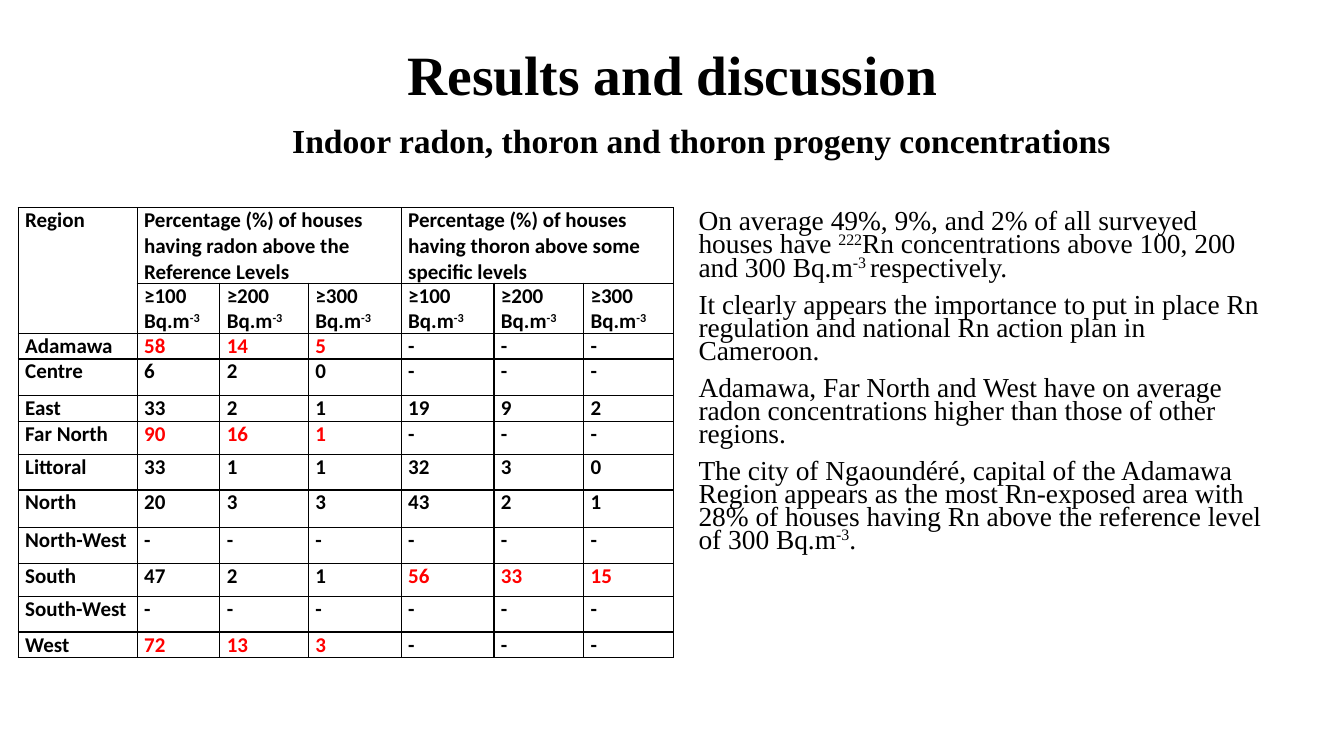
from lxml import etree
from pptx import Presentation
from pptx.dml.color import RGBColor
from pptx.enum.text import MSO_ANCHOR, PP_ALIGN
from pptx.oxml.ns import qn
from pptx.util import Inches, Pt

CENTER, JUSTIFY, LEFT = PP_ALIGN.CENTER, PP_ALIGN.JUSTIFY, PP_ALIGN.LEFT
MIDDLE = MSO_ANCHOR.MIDDLE
SERIF, SANS = "Times New Roman", "Calibri"
BLACK, RED = "000000", "FF0000"
SUPERSCRIPT_MARK = "^"

COLUMN_WIDTHS = [1.18, 0.82, 0.88, 0.92, 0.92, 0.89, 0.89]
ROW_HEIGHTS = [0.74, 0.49, 0.25, 0.36, 0.26, 0.33, 0.35, 0.37, 0.36, 0.33, 0.35, 0.25]
RADON_COLUMNS, THORON_COLUMNS = range(1, 4), range(4, 7)
LEVELS = ["≥100 Bq.m^-3^", "≥200 Bq.m^-3^", "≥300 Bq.m^-3^"]
HEADER_ROWS = [
    ["Region",
     "Percentage (%) of houses having radon above the Reference Levels", "", "",
     "Percentage (%) of houses having thoron above some specific levels", "", ""],
    [""] + LEVELS * 2,
]
REGION_ROWS = [
    ["Adamawa", "58", "14", "5", "-", "-", "-"],
    ["Centre", "6", "2", "0", "-", "-", "-"],
    ["East", "33", "2", "1", "19", "9", "2"],
    ["Far North", "90", "16", "1", "-", "-", "-"],
    ["Littoral", "33", "1", "1", "32", "3", "0"],
    ["North", "20", "3", "3", "43", "2", "1"],
    ["North-West", "-", "-", "-", "-", "-", "-"],
    ["South", "47", "2", "1", "56", "33", "15"],
    ["South-West", "-", "-", "-", "-", "-", "-"],
    ["West", "72", "13", "3", "-", "-", "-"],
]
HIGHLIGHTS = {
    "Adamawa": RADON_COLUMNS,
    "Far North": RADON_COLUMNS,
    "South": THORON_COLUMNS,
    "West": RADON_COLUMNS,
}
FINDINGS = [
    "On average 49%, 9%, and 2% of all surveyed houses have ^222^Rn concentrations "
    "above 100, 200 and 300 Bq.m^-3 ^respectively.",
    "It clearly appears the importance to put in place Rn regulation and national "
    "Rn action plan in Cameroon.",
    "Adamawa, Far North and West have on average radon concentrations higher than "
    "those of other regions.",
    "The city of Ngaoundéré, capital of the Adamawa Region appears as the most "
    "Rn-exposed area with 28% of houses having Rn above the reference level of "
    "300 Bq.m^-3^.",
]


def color(value):
    return RGBColor.from_string(value)


def write(paragraph, text, font_name, size, bold=False, font_color=BLACK):
    for index, part in enumerate(text.split(SUPERSCRIPT_MARK)):
        if not part:
            continue
        run = paragraph.add_run()
        run.text = part
        run.font.name = font_name
        run.font.size = Pt(size)
        run.font.bold = bold
        run.font.color.rgb = color(font_color)
        if index % 2:
            run._r.get_or_add_rPr().set("baseline", "30000")


def add_text_frame(slide, box, wrap=True):
    shape = slide.shapes.add_textbox(*[Inches(length) for length in box])
    shape.text_frame.word_wrap = wrap
    return shape.text_frame


def add_title(slide, box):
    text_frame = add_text_frame(slide, box)
    text_frame.vertical_anchor = MIDDLE
    paragraph = text_frame.paragraphs[0]
    paragraph.alignment = CENTER
    paragraph.line_spacing = 0.9
    write(paragraph, "Results and discussion", SERIF, 39.6, bold=True)


def add_subtitle(slide, box):
    paragraph = add_text_frame(slide, box, wrap=False).paragraphs[0]
    paragraph.level = 1
    properties = paragraph._p.get_or_add_pPr()
    properties.set("marL", str(Inches(0.5)))
    properties.set("indent", "0")
    write(paragraph, "Indoor radon, thoron and thoron progeny concentrations",
          SERIF, 24, bold=True)


def add_findings(slide, box):
    text_frame = add_text_frame(slide, box)
    for index, finding in enumerate(FINDINGS):
        paragraph = text_frame.add_paragraph() if index else text_frame.paragraphs[0]
        paragraph.line_spacing = 0.7
        paragraph.space_before = Pt(10)
        write(paragraph, finding, SERIF, 19.6)


def add_borders(cell):
    properties = cell._tc.get_or_add_tcPr()
    for index, side in enumerate(["lnL", "lnR", "lnT", "lnB"]):
        line = etree.Element(qn(f"a:{side}"), w=str(Pt(1)))
        fill = etree.SubElement(line, qn("a:solidFill"))
        etree.SubElement(fill, qn("a:srgbClr"), val=BLACK)
        properties.insert(index, line)


def format_cell(cell, text, alignment, font_color):
    cell.margin_left = cell.margin_right = Inches(0.07)
    cell.margin_top = cell.margin_bottom = 0
    cell.fill.background()
    add_borders(cell)
    paragraph = cell.text_frame.paragraphs[0]
    paragraph.alignment = alignment
    paragraph.space_after = Pt(6)
    write(paragraph, text, SANS, 15, bold=True, font_color=font_color)


def add_radon_table(slide, box):
    rows = HEADER_ROWS + REGION_ROWS
    table = slide.shapes.add_table(len(rows), len(COLUMN_WIDTHS),
                                   *[Inches(length) for length in box]).table
    table.first_row = table.horz_banding = False
    for column, width in zip(table.columns, COLUMN_WIDTHS):
        column.width = Inches(width)
    for row, height in zip(table.rows, ROW_HEIGHTS):
        row.height = Inches(height)

    table.cell(0, 0).merge(table.cell(1, 0))
    for columns in (RADON_COLUMNS, THORON_COLUMNS):
        table.cell(0, columns[0]).merge(table.cell(0, columns[-1]))

    for row_index, values in enumerate(rows):
        highlighted = HIGHLIGHTS.get(values[0], ())
        for column_index, text in enumerate(values):
            is_header = row_index < len(HEADER_ROWS) and column_index > 0
            format_cell(table.cell(row_index, column_index), text,
                        LEFT if is_header else JUSTIFY,
                        RED if column_index in highlighted else BLACK)


def main():
    presentation = Presentation()
    presentation.slide_width = Inches(13.33)
    presentation.slide_height = Inches(7.5)
    slide = presentation.slides.add_slide(presentation.slide_layouts[6])
    add_title(slide, (0.92, 0.4, 11.5, 0.74))
    add_radon_table(slide, (0.18, 2.06, 6.5, 4.47))
    add_findings(slide, (6.83, 2.06, 5.84, 3.83))
    add_subtitle(slide, (2.3, 1.14, 8.9, 0.5))
    presentation.save("out.pptx")


if __name__ == "__main__":
    main()
